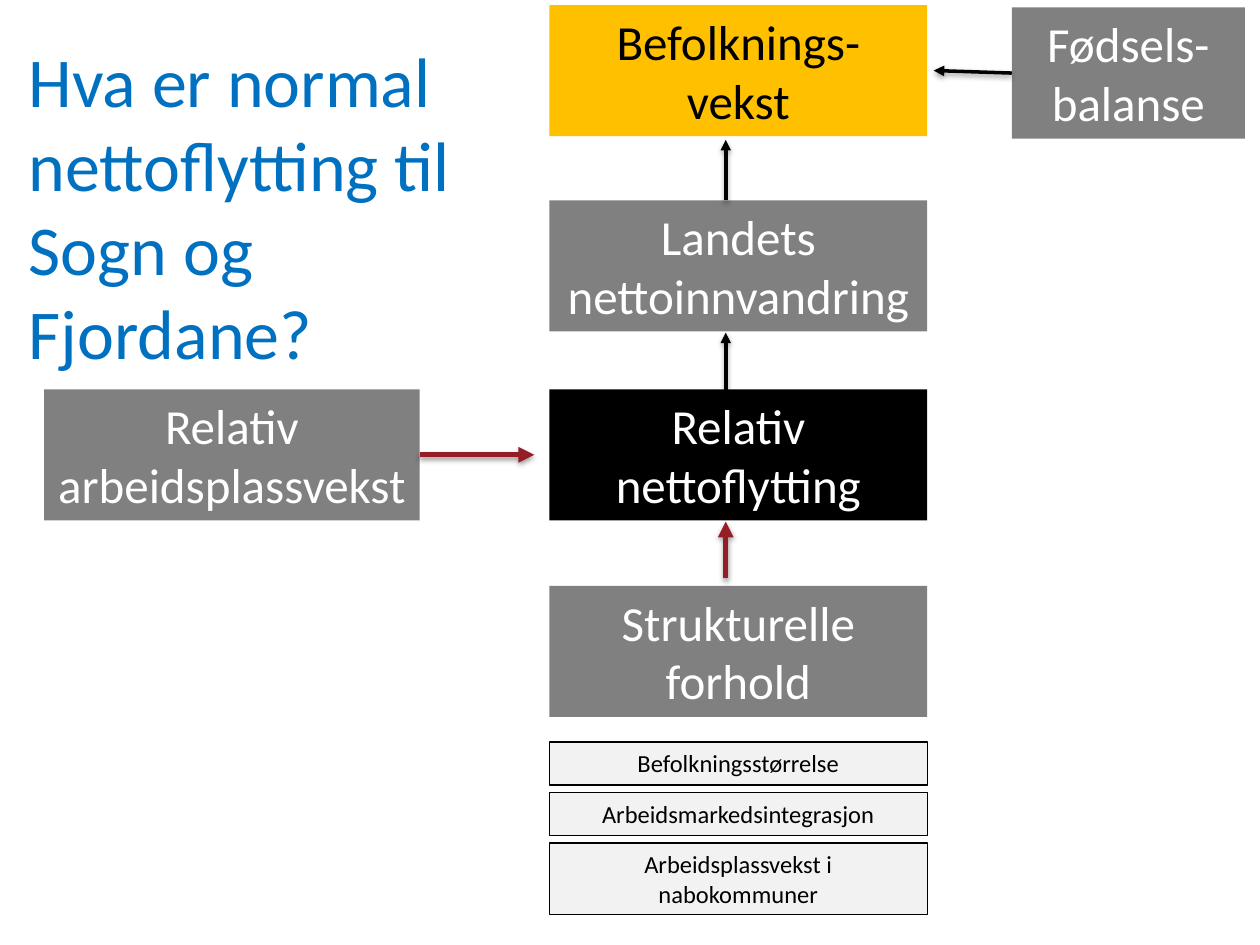
from lxml import etree
from pptx import Presentation
from pptx import util as u
from pptx.dml.color import RGBColor
from pptx.enum import shapes, text
from pptx.oxml.ns import qn

# Content
COLORS = {"grey": "808080", "black": "000000", "gold": "FFC000", "white": "FFFFFF",
          "pale": "F2F2F2", "red": "951D26", "blue": "0070C0"}
TITLE = "Hva er normal nettoflytting til Sogn og Fjordane?"
COL_X, COL_W, BOX_H = 4.36, 3, 1.04
ARROW_X = 5.76

# name: (paragraphs, left, top, width, fill, text colour)
BOXES = {
    "jobs": (["Relativ arbeidsplassvekst"], 0.35, 3.09, 2.98, "grey", "white"),
    "migration": (["Relativ nettoflytting"], COL_X, 3.09, COL_W, "black", "white"),
    "growth": (["Befolknings-", "vekst"], COL_X, 0.04, COL_W, "gold", "black"),
    "births": (["Fødsels-balanse"], 8.03, 0.06, 1.85, "grey", "white"),
    "structure": (["Strukturelle forhold"], COL_X, 4.65, COL_W, "grey", "white"),
    "immigration": (["Landets nettoinnvandring"], COL_X, 1.59, COL_W, "grey", "white"),
}
# (text, height) of the structural factors, stacked downwards
FACTORS = [("Befolkningsstørrelse", 0.34), ("Arbeidsmarkedsintegrasjon", 0.34),
           ("Arbeidsplassvekst i nabokommuner", 0.57)]
FACTOR_TOP, FACTOR_GAP = 5.89, 0.06

# (start, end, colour, width, joined box, side)
ARROWS = [
    ((ARROW_X, 4.59), (ARROW_X, 4.14), "red", 3, None, None),
    ((ARROW_X, 3.11), (ARROW_X, 2.64), "black", 2, None, None),
    ((8.03, 0.58), (7.41, 0.56), "black", 2, "births", 1),
    ((3.33, 3.61), (4.24, 3.61), "red", 3, "jobs", 3),
    ((ARROW_X, 1.59), (ARROW_X, 1.11), "black", 2, None, None),
]


def rgb(name):
    return RGBColor.from_string(COLORS[name])


def write(sp, paragraphs, size, color, align):
    tf = sp.text_frame
    frame_format = {"word_wrap": True, "vertical_anchor": text.MSO_ANCHOR.TOP,
                    "auto_size": text.MSO_AUTO_SIZE.SHAPE_TO_FIT_TEXT}
    for key, value in frame_format.items():
        setattr(tf, key, value)
    for i, words in enumerate(paragraphs):
        p = tf.paragraphs[0] if i == 0 else tf.add_paragraph()
        p.alignment = align
        r = p.add_run()
        r.text = words
        for key, value in {"name": "Calibri", "size": u.Pt(size)}.items():
            setattr(r.font, key, value)
        r.font.color.rgb = rgb(color)


def add_box(s, paragraphs, place, fill, color, size, outlined=False):
    sp = s.shapes.add_shape(shapes.MSO_SHAPE.RECTANGLE, *map(u.Inches, place))
    sp.shadow.inherit = False
    sp.fill.solid()
    sp.fill.fore_color.rgb = rgb(fill)
    if outlined:
        sp.line.color.rgb = rgb("black")
        sp.line.width = u.Pt(0.75)
    else:
        sp.line.fill.background()
    write(sp, paragraphs, size, color, text.PP_ALIGN.CENTER)
    return sp


def add_arrow(s, start, end, color, width, box, side):
    c = s.shapes.add_connector(shapes.MSO_CONNECTOR.STRAIGHT,
                               *map(u.Inches, start + end))
    if box is not None:
        c.begin_connect(box, side)
    c.line.color.rgb = rgb(color)
    c.line.width = u.Pt(width)
    etree.SubElement(c.line._get_or_add_ln(), qn("a:tailEnd"), type="triangle")
    # Soft shadow straight below the line
    effects = etree.SubElement(c._element.spPr, qn("a:effectLst"))
    shadow = etree.SubElement(effects, qn("a:outerShdw"), blurRad=str(u.Pt(3.1)),
                              dist=str(u.Pt(1.6)), dir="5400000", rotWithShape="0")
    tint = etree.SubElement(shadow, qn("a:srgbClr"), val=COLORS["black"])
    etree.SubElement(tint, qn("a:alpha"), val="38000")


def main():
    prs = Presentation()
    prs.slide_width, prs.slide_height = u.Inches(10), u.Inches(7.5)
    s = prs.slides.add_slide(prs.slide_layouts[6])

    # Model boxes
    boxes = {name: add_box(s, words, (x, y, w, BOX_H), fill, color, 28)
             for name, (words, x, y, w, fill, color) in BOXES.items()}

    # Structural factors
    top = FACTOR_TOP
    for words, height in FACTORS:
        add_box(s, [words], (COL_X, top, COL_W, height), "pale", "black", 14, True)
        top += height + FACTOR_GAP

    # Arrows
    for start, end, color, width, name, side in ARROWS:
        add_arrow(s, start, end, color, width, boxes.get(name), side)

    # Title
    title = s.shapes.add_textbox(*map(u.Inches, (0.13, 0.25, 3.67, 2.79)))
    write(title, [TITLE], 40, "blue", text.PP_ALIGN.LEFT)

    prs.save("out.pptx")


if __name__ == "__main__":
    main()
